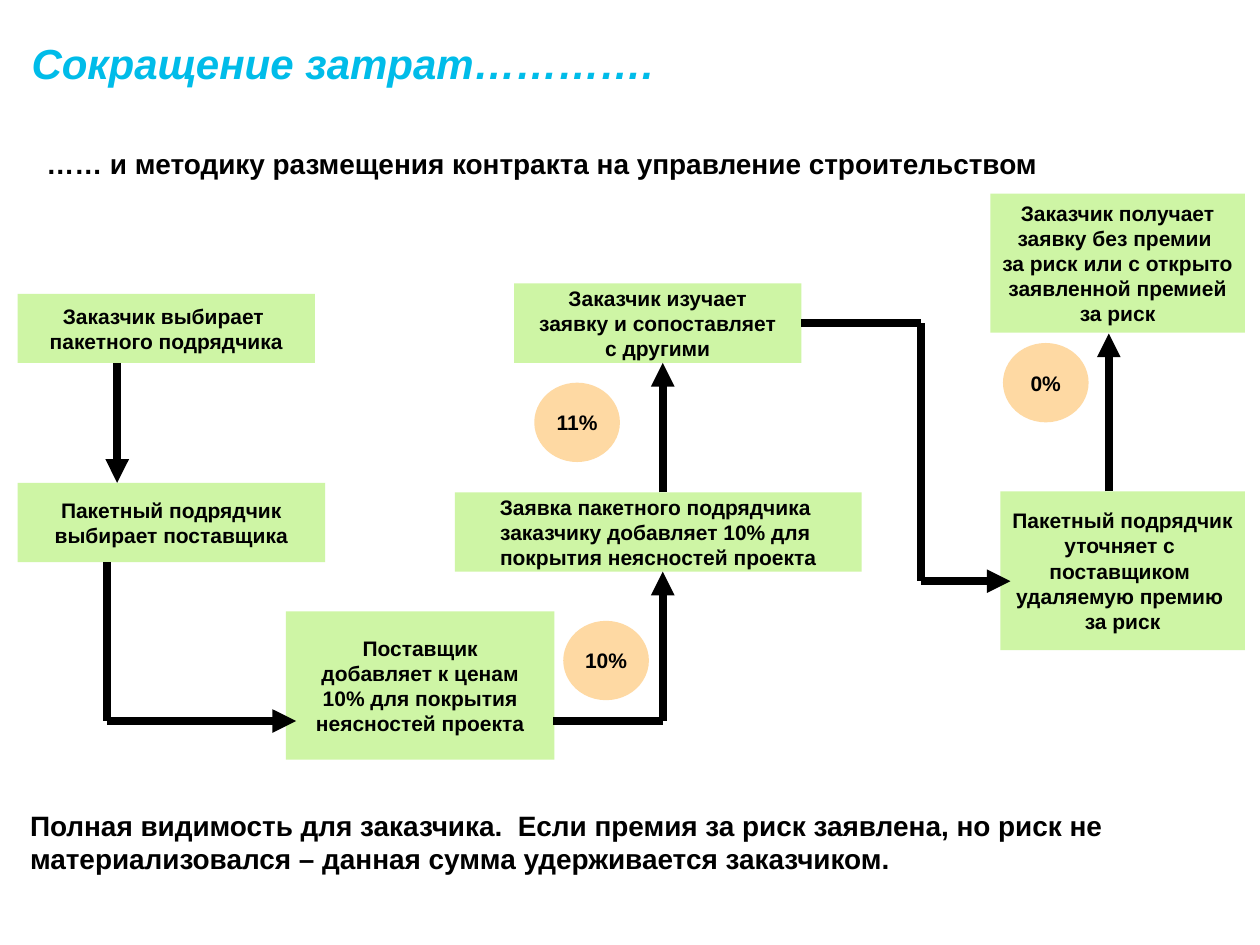
from itertools import pairwise

from lxml import etree
from pptx import Presentation
from pptx.dml.color import RGBColor
from pptx.enum.shapes import MSO_CONNECTOR, MSO_SHAPE
from pptx.enum.text import MSO_ANCHOR, MSO_AUTO_SIZE, PP_ALIGN
from pptx.oxml.ns import qn
from pptx.util import Inches, Pt

RECTANGLE, OVAL = MSO_SHAPE.RECTANGLE, MSO_SHAPE.OVAL
STRAIGHT = MSO_CONNECTOR.STRAIGHT
TOP, MIDDLE = MSO_ANCHOR.TOP, MSO_ANCHOR.MIDDLE
LEFT, CENTER = PP_ALIGN.LEFT, PP_ALIGN.CENTER
NO_AUTOFIT = MSO_AUTO_SIZE.NONE
RIGHT_SIDE = 3

WIDTH, HEIGHT = Inches(10), Inches(7.5)
COLORS = {"title": "00BCE9", "text": "000000", "step": "CEF5A5", "premium": "FED9A3"}
FONTS = {
    "title": {"name": "Arial", "size": Pt(24), "bold": True, "italic": True},
    "note": {"name": "Arial", "size": Pt(16), "bold": True},
    "step": {"name": "Arial", "size": Pt(12), "bold": True},
}

# Frames and points are percentages of the slide's width and height.
STEPS = {
    "select": ((1.4, 31.1, 23.6, 7.3), "Заказчик выбирает \vпакетного подрядчика"),
    "review": ((40.8, 30, 22.8, 8.4), "Заказчик изучает\vзаявку и сопоставляет\vс другими"),
    "bid": ((36.1, 52.1, 32.3, 8.4),
            "Заявка пакетного подрядчика \vзаказчику добавляет 10% для \vпокрытия неясностей проекта"),
    "supplier": ((1.4, 51.1, 24.4, 8.4), "Пакетный подрядчик\vвыбирает поставщика"),
    "pricing": ((22.7, 64.7, 21.3, 15.7),
                "Поставщик\vдобавляет к ценам\v10% для покрытия\vнеясностей проекта"),
    "result": ((78.6, 20.5, 20.2, 14.7),
               "Заказчик получает\vзаявку без премии \vза риск или с открыто\vзаявленной премией\vза риск"),
    "clarify": ((79.4, 52, 19.4, 16.8),
                "Пакетный подрядчик\nуточняет с \vпоставщиком \vудаляемую премию \vза риск"),
}
PREMIUMS = [("11%", 42.4, 40.5), ("10%", 44.7, 65.7), ("0%", 79.6, 36.3)]
PREMIUM_SIZE = (6.8, 8.4)
REVIEW_ROUTE = [(63.6, 34.2), (73.1, 34.2), (73.1, 61.5), (80.2, 61.5)]
ROUTES = [
    [(9.3, 38.4), (9.3, 51.1)],
    [(8.5, 59.5), (8.5, 76.3), (23.5, 76.3)],
    [(43.9, 76.3), (52.6, 76.3), (52.6, 60.5)],
    [(52.6, 52.1), (52.6, 38.4)],
    [(88, 52), (88, 35.3)],
]


def scale(shares):
    """Turn alternating x and y percentages into slide lengths."""
    return [int((HEIGHT if i % 2 else WIDTH) * share / 100) for i, share in enumerate(shares)]


def write(frame, text, font, color="text", align=LEFT, **layout):
    """Fill a text frame and format its layout, paragraphs and runs."""
    frame.text = text
    for attribute, value in layout.items():
        setattr(frame, attribute, value)
    for paragraph in frame.paragraphs:
        paragraph.alignment = align
        for run in paragraph.runs:
            for attribute, value in FONTS[font].items():
                setattr(run.font, attribute, value)
            run.font.color.rgb = RGBColor.from_string(COLORS[color])


def add_title(slide, text):
    """Place and format the title placeholder."""
    title = slide.shapes.title
    title.left, title.top, title.width, title.height = scale((0, 4.8, 95.8, 11.1))
    write(title.text_frame, text, "title", "title", vertical_anchor=TOP, auto_size=NO_AUTOFIT,
          margin_left=Inches(0.25), margin_top=0, margin_right=0, margin_bottom=0)
    title.text_frame.paragraphs[0].line_spacing = 0.85


def add_note(slide, frame, text, anchor):
    """Add a line of running text."""
    note = slide.shapes.add_textbox(*scale(frame))
    write(note.text_frame, text, "note", word_wrap=True, vertical_anchor=anchor)


def add_node(slide, outline, frame, text, color):
    """Add a filled shape with centred text."""
    node = slide.shapes.add_shape(outline, *scale(frame))
    node.shadow.inherit = False
    node.fill.solid()
    node.fill.fore_color.rgb = RGBColor.from_string(COLORS[color])
    node.line.fill.background()
    write(node.text_frame, text, "step", align=CENTER, word_wrap=False, vertical_anchor=MIDDLE)
    return node


def add_route(slide, points):
    """Draw straight segments through the points, with an arrowhead on the last."""
    segments = []
    for start, end in pairwise(points):
        segment = slide.shapes.add_connector(STRAIGHT, *scale(start + end))
        segment.line.width = Pt(4.5)
        segment.line.color.rgb = RGBColor.from_string(COLORS["text"])
        etree.SubElement(segment._element.spPr, qn("a:effectLst"))
        segments.append(segment)
    etree.SubElement(segments[-1].line._get_or_add_ln(), qn("a:tailEnd"), type="triangle")
    return segments


def main():
    """Build the contract placement flow slide."""
    deck = Presentation()
    deck.slide_width, deck.slide_height = WIDTH, HEIGHT
    slide = deck.slides.add_slide(deck.slide_layouts[5])
    add_title(slide, "Сокращение затрат………….")
    add_note(slide, (2.7, 14.9, 96.9, 4.9),
             "…… и методику размещения контракта на управление строительством", TOP)
    steps = {key: add_node(slide, RECTANGLE, frame, text, "step")
             for key, (frame, text) in STEPS.items()}
    for route in ROUTES:
        add_route(slide, route)
    add_route(slide, REVIEW_ROUTE)[0].begin_connect(steps["review"], RIGHT_SIDE)
    for label, left, top in PREMIUMS:
        add_node(slide, OVAL, (left, top, *PREMIUM_SIZE), label, "premium")
    add_note(slide, (1.4, 84.9, 98.6, 8.4),
             "Полная видимость для заказчика.  Если премия за риск заявлена, но риск не\v"
             "материализовался – данная сумма удерживается заказчиком.", MIDDLE)
    deck.save("out.pptx")


if __name__ == "__main__":
    main()
